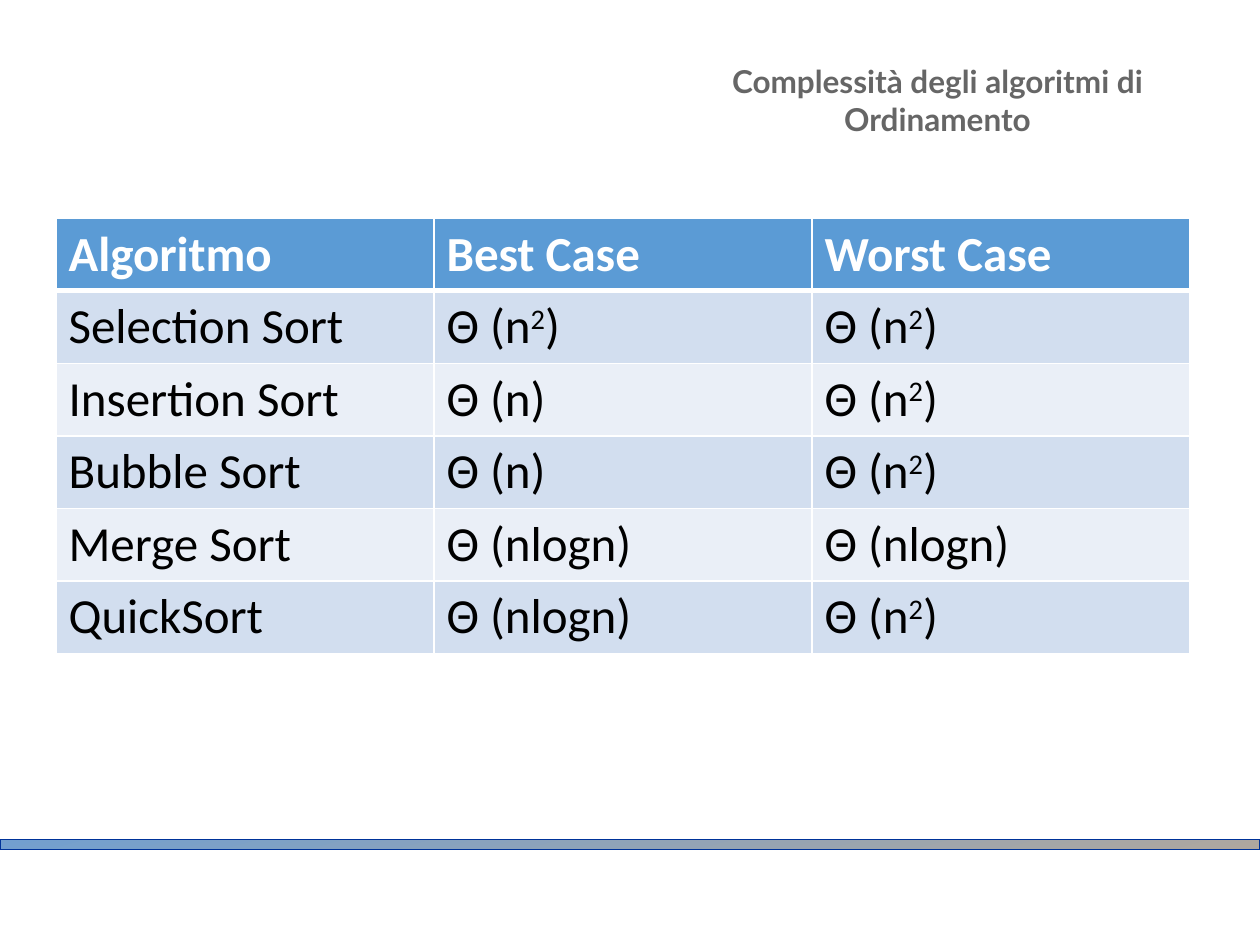
"""Build a slide with a table of sorting algorithm complexities."""
from lxml import etree
from pptx import Presentation
from pptx.dml.color import RGBColor
from pptx.enum.shapes import MSO_SHAPE
from pptx.enum.text import MSO_ANCHOR, PP_ALIGN
from pptx.oxml.ns import qn
from pptx.util import Cm, Pt

RECT = MSO_SHAPE.RECTANGLE
MIDDLE = MSO_ANCHOR.MIDDLE
LEFT, CENTER = PP_ALIGN.LEFT, PP_ALIGN.CENTER

WHITE = RGBColor(0xFF, 0xFF, 0xFF)
BLACK = RGBColor(0x00, 0x00, 0x00)
GREY = RGBColor(0x66, 0x66, 0x66)
NAVY = RGBColor(0x00, 0x33, 0x99)
SKY = RGBColor(0x72, 0x9F, 0xCF)
SAND = RGBColor(0xAE, 0xA7, 0x9F)
HEAD = RGBColor(0x5B, 0x9B, 0xD5)
BANDS = [RGBColor(0xEA, 0xEF, 0xF7), RGBColor(0xD2, 0xDE, 0xEF)]

SQUARE, LINEAR, LOG = "Θ (n^2^)", "Θ (n)", "Θ (nlogn)"
ROWS = [
    ("Algoritmo", "Best Case", "Worst Case"),
    ("Selection Sort", SQUARE, SQUARE),
    ("Insertion Sort", LINEAR, SQUARE),
    ("Bubble Sort", LINEAR, SQUARE),
    ("Merge Sort", LOG, LOG),
    ("QuickSort", LOG, SQUARE),
]


def write(frame, text, font="Calibri", size=28, color=BLACK, bold=False, align=LEFT):
    """Write text, raising the parts set between carets."""
    para = frame.paragraphs[0]
    para.alignment = align
    for i, part in enumerate(text.split("^")):
        run = para.add_run()
        run.text = part
        run.font.name = font
        run.font.size = Pt(size)
        run.font.bold = bold
        run.font.color.rgb = color
        if i % 2:
            run._r.get_or_add_rPr().set("baseline", "30000")


def edge(cell, side, width):
    """Draw a white border on one side of a cell."""
    line = etree.SubElement(cell._tc.get_or_add_tcPr(), qn(f"a:ln{side}"), w=str(Pt(width)))
    fill = etree.SubElement(line, qn("a:solidFill"))
    etree.SubElement(fill, qn("a:srgbClr"), val=str(WHITE))


deck = Presentation()
deck.slide_width, deck.slide_height = Cm(25.4), Cm(19.05)
slide = deck.slides.add_slide(deck.slide_layouts[5])

bar = slide.shapes.add_shape(RECT, Cm(0), Cm(16.92), Cm(25.4), Cm(0.2))
bar.shadow.inherit = False
bar.fill.gradient()
bar.fill.gradient_angle = 285
for stop, color, place in zip(bar.fill.gradient_stops, (SKY, SAND), (0, 1)):
    stop.color.rgb = color
    stop.position = place
bar.line.color.rgb = NAVY
bar.line.width = Pt(0.75)

title = slide.shapes.title
title.left, title.top, title.width, title.height = Cm(13.11), Cm(0.58), Cm(11.58), Cm(2.87)
title.text_frame.word_wrap = True
title.text_frame.vertical_anchor = MIDDLE
write(title.text_frame, "Complessità degli algoritmi di Ordinamento",
      font="Lato", size=18, color=GREY, bold=True, align=CENTER)

table = slide.shapes.add_table(len(ROWS), 3, Cm(1.13), Cm(4.4), Cm(22.86), Cm(8.76)).table
for r, row in enumerate(ROWS):
    for c, text in enumerate(row):
        cell = table.cell(r, c)
        for side in "LRTB":
            thick = (r == 0 and side == "B") or (r == 1 and side == "T")
            edge(cell, side, 3 if thick else 1)
        cell.fill.solid()
        cell.fill.fore_color.rgb = BANDS[r % 2] if r else HEAD
        write(cell.text_frame, text, color=BLACK if r else WHITE, bold=r == 0)

deck.save("out.pptx")
